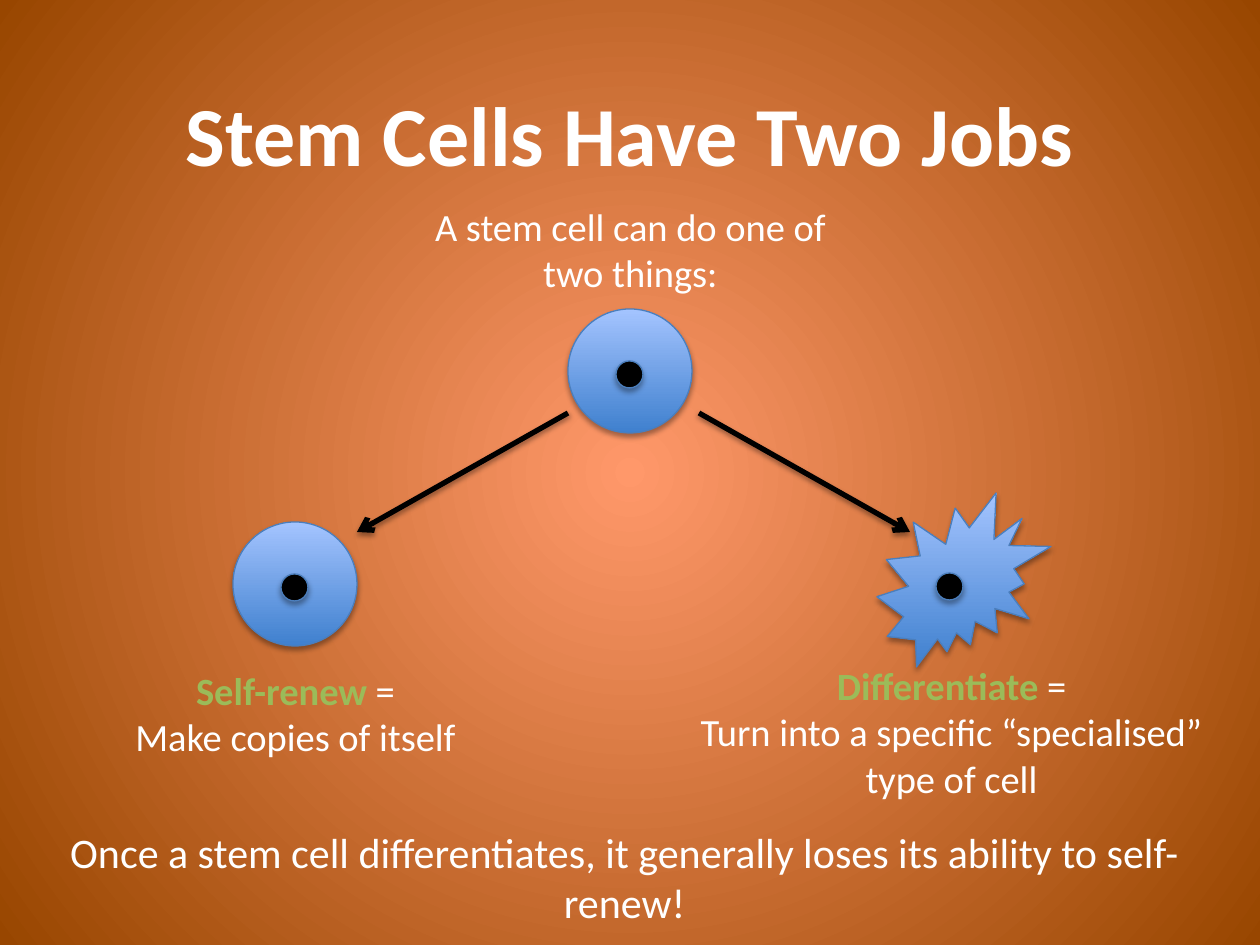
import pptx
import pptx.dml.color
import pptx.enum.shapes
import pptx.enum.text
import pptx.oxml
import pptx.oxml.ns
import pptx.util

PX = 914400 / 126
SLIDE_W, SLIDE_H = 1260, 945
FONT = "Calibri"
TITLE_PT, CLOSING_PT, LABEL_PT = 48, 24, 22
CELL, SEAL, NUCLEUS = 124, 174, 27
THIN = pptx.util.Pt(0.75)
COLORS = {
    "bg_center": "FF986A",
    "bg_edge": "984600",
    "text": "FFFFFF",
    "term": "9BBB59",
    "term_outline": "4F81BD",
    "cell_bottom": "3F80CE",
    "cell_top": "A4C4FF",
    "cell_line": "4B7EBC",
    "dark": "000000",
}
SHAPE = pptx.enum.shapes.MSO_SHAPE
NS = pptx.oxml.ns.nsdecls("a")
qn = pptx.oxml.ns.qn


def px(*lengths):
    """Turn px lengths into EMU."""
    return [round(n * PX) for n in lengths]


def rgb(name):
    return pptx.dml.color.RGBColor.from_string(COLORS[name])


def set_gradient(fill, *names):
    fill.gradient()
    for stop, name in zip(fill.gradient_stops, names):
        stop.color.rgb = rgb(name)


def add_shadow(sp, opacity, distance):
    """Drop a soft shadow straight down; opacity in percent, distance in points."""
    sp.element.spPr.append(pptx.oxml.parse_xml(
        f'<a:effectLst {NS}><a:outerShdw blurRad="{pptx.util.Pt(3.1)}" '
        f'dist="{pptx.util.Pt(distance)}" dir="5400000" rotWithShape="0">'
        f'<a:srgbClr val="{COLORS["dark"]}"><a:alpha val="{opacity * 1000}"/></a:srgbClr>'
        '</a:outerShdw></a:effectLst>'))


def outline_run(r, color):
    r._r.get_or_add_rPr().insert(0, pptx.oxml.parse_xml(
        f'<a:ln {NS} w="{THIN}"><a:solidFill>'
        f'<a:srgbClr val="{COLORS[color]}"/></a:solidFill></a:ln>'))


def format_text(tf, size, bold=False):
    """Centre every paragraph and give its runs the slide's font."""
    for p in tf.paragraphs:
        p.alignment = pptx.enum.text.PP_ALIGN.CENTER
        for r in p.runs:
            r.font.name = FONT
            r.font.size = pptx.util.Pt(size)
            r.font.bold = bold
            r.font.color.rgb = rgb("text")


def set_background(s):
    """Fill the slide with a gradient that spreads from its centre."""
    set_gradient(s.background.fill, "bg_center", "bg_edge")
    grad = s.element.find(".//" + qn("a:gradFill"))
    grad.replace(grad.find(qn("a:lin")), pptx.oxml.parse_xml(
        f'<a:path {NS} path="circle"><a:fillToRect l="50000" t="50000" '
        'r="50000" b="50000"/></a:path>'))


def set_title(s, text, box):
    title = s.shapes.title
    title.left, title.top, title.width, title.height = px(*box)
    tf = title.text_frame
    tf.text = text
    tf.vertical_anchor = pptx.enum.text.MSO_ANCHOR.MIDDLE
    format_text(tf, TITLE_PT, bold=True)


def add_text(s, text, box, size=LABEL_PT):
    tf = s.shapes.add_textbox(*px(*box)).text_frame
    tf.word_wrap = True
    tf.auto_size = pptx.enum.text.MSO_AUTO_SIZE.SHAPE_TO_FIT_TEXT
    tf.text = text
    format_text(tf, size)
    return tf


def add_definition(s, term, meaning, box):
    """Add a highlighted term and an equals sign, with the meaning below."""
    tf = add_text(s, f"{term}\n{meaning}", box)
    p = tf.paragraphs[0]
    p.add_run().text = " ="
    format_text(tf, LABEL_PT)
    r = p.runs[0]
    r.font.bold = True
    r.font.color.rgb = rgb("term")
    outline_run(r, "term_outline")


def add_cell(s, box, nucleus_offset, outline=SHAPE.OVAL):
    """Group a cell body with its nucleus, offset from the corner of the box."""
    x, y, w, h = box
    dx, dy = nucleus_offset
    group = s.shapes.add_group_shape()
    body = group.shapes.add_shape(outline, *px(x, y, w, h))
    set_gradient(body.fill, "cell_bottom", "cell_top")
    body.fill.gradient_angle = 90
    nucleus = group.shapes.add_shape(
        SHAPE.OVAL, *px(x + dx, y + dy, NUCLEUS, NUCLEUS))
    nucleus.fill.solid()
    nucleus.fill.fore_color.rgb = rgb("dark")
    for sp in (body, nucleus):
        sp.line.color.rgb = rgb("cell_line")
        sp.line.width = THIN
        add_shadow(sp, opacity=35, distance=1.8)


def add_arrow(s, start, end):
    arrow = s.shapes.add_connector(
        pptx.enum.shapes.MSO_CONNECTOR.STRAIGHT, *px(*start, *end))
    arrow.line.color.rgb = rgb("dark")
    arrow.line.width = pptx.util.Pt(3)
    arrow.line._get_or_add_ln().append(
        pptx.oxml.parse_xml(f'<a:tailEnd {NS} type="arrow"/>'))
    add_shadow(arrow, opacity=38, distance=1.6)


def add_diagram(s, box):
    """Place the stem cell, its two outcomes and the arrows to them."""
    x, y, w, h = box
    stem_x = x + 335
    copy_y = y + 213
    seal_x, seal_y = x + w - SEAL, y + h - SEAL
    round_nucleus, seal_nucleus = (48, 52), (59, 80)
    add_cell(s, (stem_x, y, CELL, CELL), round_nucleus)
    add_cell(s, (x, copy_y, CELL, CELL), round_nucleus)
    add_cell(s, (seal_x, seal_y, SEAL, SEAL), seal_nucleus, SHAPE.EXPLOSION2)

    arrow_top, arrow_bottom = y + 104, y + 223
    run = stem_x - (x + CELL)
    right_start = stem_x + CELL + 7
    for start_x, end_x in ((stem_x, stem_x - run),
                           (right_start, right_start + run)):
        add_arrow(s, (start_x, arrow_top), (end_x, arrow_bottom))


def build_slide(prs):
    s = prs.slides.add_slide(prs.slide_layouts[5])
    set_background(s)
    set_title(s, "Stem Cells Have Two Jobs", (54, 84, 1151, 97))
    add_diagram(s, (233, 309, 818, 358))
    add_text(s, "A stem cell can do one of two things:", (417, 197, 427, 106))
    definitions = (
        ("Self-renew", "Make copies of itself", (82, 661, 427, 106)),
        ("Differentiate", "Turn into a specific “specialised” type of cell",
         (664, 656, 575, 152)),
    )
    for term, meaning, box in definitions:
        add_definition(s, term, meaning, box)
    add_text(s, "Once a stem cell differentiates, it generally loses "
             "its ability to self-renew!", (10, 820, 1229, 115), CLOSING_PT)


def main():
    prs = pptx.Presentation()
    prs.slide_width, prs.slide_height = px(SLIDE_W, SLIDE_H)
    build_slide(prs)
    prs.save("out.pptx")


if __name__ == "__main__":
    main()
